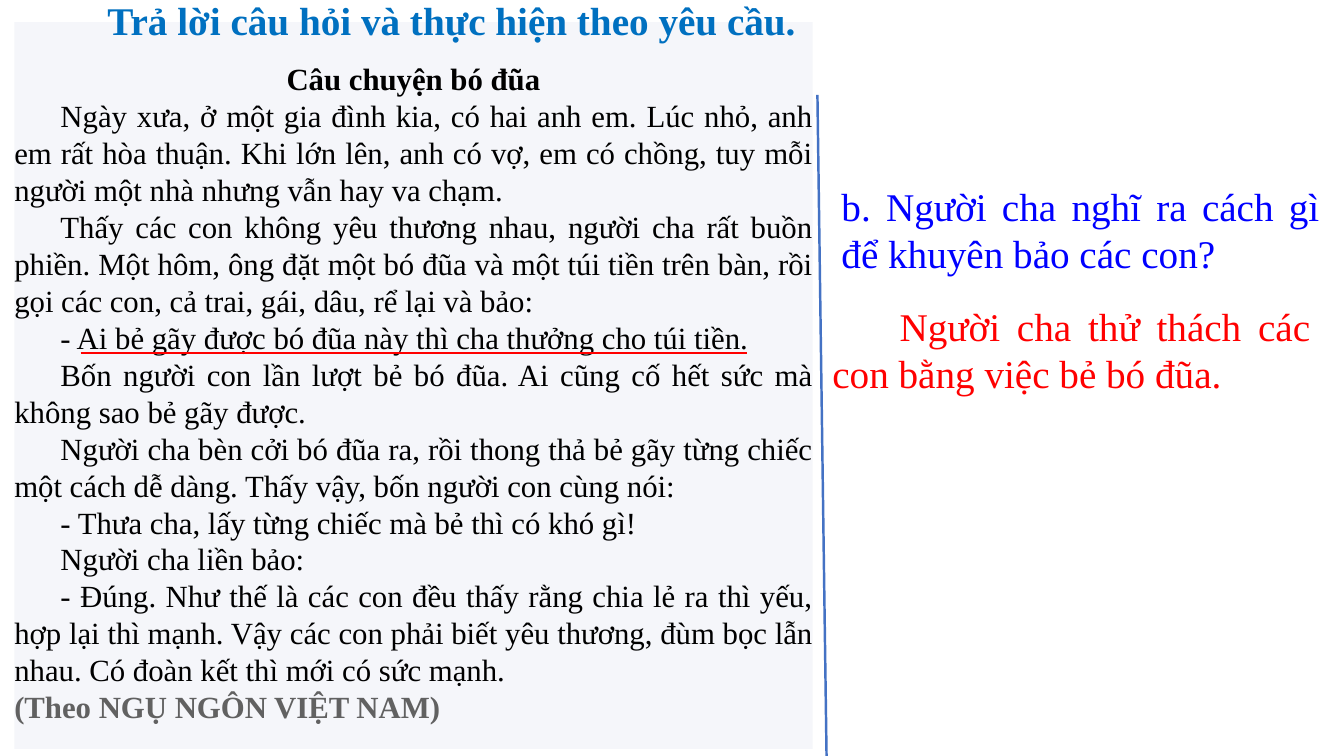
import pptx
import pptx.dml.color
import pptx.enum.shapes
import pptx.enum.text
import pptx.oxml
import pptx.util

Pt = pptx.util.Pt
RGBColor = pptx.dml.color.RGBColor
ALIGN = pptx.enum.text.PP_ALIGN
ANCHOR = pptx.enum.text.MSO_ANCHOR

COLORS = {
    "panel": "F5F6FA",
    "heading": "0070C0",
    "story": "000000",
    "credit": "616161",
    "question": "0000FF",
    "answer": "FF0000",
    "divider": "4472C4",
    "underline": "FF0000",
}
FONT = "Times New Roman"
STORY_SIZE = 22
PROMPT_SIZE = 28
STORY_INDENT = 33

STORY = [
    "Ngày xưa, ở một gia đình kia, có hai anh em. Lúc nhỏ, anh em rất hòa thuận. "
    "Khi lớn lên, anh có vợ, em có chồng, tuy mỗi người một nhà nhưng vẫn hay va chạm.",
    "Thấy các con không yêu thương nhau, người cha rất buồn phiền. Một hôm, ông đặt một bó đũa "
    "và một túi tiền trên bàn, rồi gọi các con, cả trai, gái, dâu, rể lại và bảo:",
    "- Ai bẻ gãy được bó đũa này thì cha thưởng cho túi tiền.",
    "Bốn người con lần lượt bẻ bó đũa. Ai cũng cố hết sức mà không sao bẻ gãy được.",
    "Người cha bèn cởi bó đũa ra, rồi thong thả bẻ gãy từng chiếc một cách dễ dàng. "
    "Thấy vậy, bốn người con cùng nói:",
    "- Thưa cha, lấy từng chiếc mà bẻ thì có khó gì!",
    "Người cha liền bảo:",
    "- Đúng. Như thế là các con đều thấy rằng chia lẻ ra thì yếu, hợp lại thì mạnh. "
    "Vậy các con phải biết yêu thương, đùm bọc lẫn nhau. Có đoàn kết thì mới có sức mạnh.",
]


def write(paragraph, text, size, color, align=ALIGN.JUSTIFY, bold=False, indent=0):
    """Fill a paragraph with one formatted run; indent is for its first line, in points."""
    paragraph.alignment = align
    if indent:
        paragraph._p.get_or_add_pPr().set("indent", str(Pt(indent)))
    run = paragraph.add_run()
    run.text = text
    for name, value in {"name": FONT, "size": Pt(size), "bold": bold}.items():
        setattr(run.font, name, value)
    run.font.color.rgb = RGBColor.from_string(COLORS[color])


deck = pptx.Presentation()
deck.slide_width, deck.slide_height = Pt(960), Pt(540)
slide = deck.slides.add_slide(deck.slide_layouts[6])

# Story panel
panel = slide.shapes.add_shape(
    pptx.enum.shapes.MSO_SHAPE.RECTANGLE, Pt(10.2), Pt(15.8), Pt(570.2), Pt(519.2))
panel.shadow.inherit = False
panel.fill.solid()
panel.fill.fore_color.rgb = RGBColor.from_string(COLORS["panel"])
panel.line.fill.background()
story = panel.text_frame
story_format = {
    "word_wrap": True, "vertical_anchor": ANCHOR.TOP,
    "margin_left": 0, "margin_right": 0, "margin_top": Pt(27), "margin_bottom": 0,
}
for name, value in story_format.items():
    setattr(story, name, value)
write(story.paragraphs[0], "Câu chuyện bó đũa", STORY_SIZE, "story", ALIGN.CENTER, bold=True)
for passage in STORY:
    write(story.add_paragraph(), passage, STORY_SIZE, "story", indent=STORY_INDENT)
write(story.add_paragraph(), "(Theo NGỤ NGÔN VIỆT NAM)", STORY_SIZE, "credit",
      ALIGN.LEFT, bold=True)

# Heading, question and answer
prompts = [
    ("heading", (37.4, -24.5, 570.2, 82), "Trả lời câu hỏi và thực hiện theo yêu cầu.",
     {"align": ALIGN.CENTER, "bold": True}),
    ("question", (594, 126.7, 355.7, 75), "b. Người cha nghĩ ra cách gì để khuyên bảo các con?", {}),
    ("answer", (587.5, 212.4, 355.7, 75), "Người cha thử thách các con bằng việc bẻ bó đũa.",
     {"indent": 48}),
]
for part, box, text, options in prompts:
    frame = slide.shapes.add_textbox(*map(Pt, box)).text_frame
    frame.word_wrap = True
    write(frame.paragraphs[0], text, PROMPT_SIZE, part, **options)
    if part == "heading":
        frame.vertical_anchor = ANCHOR.MIDDLE
        frame.paragraphs[0].line_spacing = 0.9
        frame.paragraphs[0].space_after = Pt(6)

# Divider beside the story and underline of the father's challenge
rules = [
    ("divider", (583.9, 67.7, 590.4, 540), 1.75),
    ("underline", (57.6, 252.4, 533.5, 252.4), 1.5),
]
for part, ends, width in rules:
    rule = slide.shapes.add_connector(
        pptx.enum.shapes.MSO_CONNECTOR.STRAIGHT, *map(Pt, ends))
    rule.line.color.rgb = RGBColor.from_string(COLORS[part])
    rule.line.width = Pt(width)
    rule._element.spPr.append(pptx.oxml.parse_xml(
        '<a:effectLst xmlns:a="http://schemas.openxmlformats.org/drawingml/2006/main"/>'))

deck.save("out.pptx")
